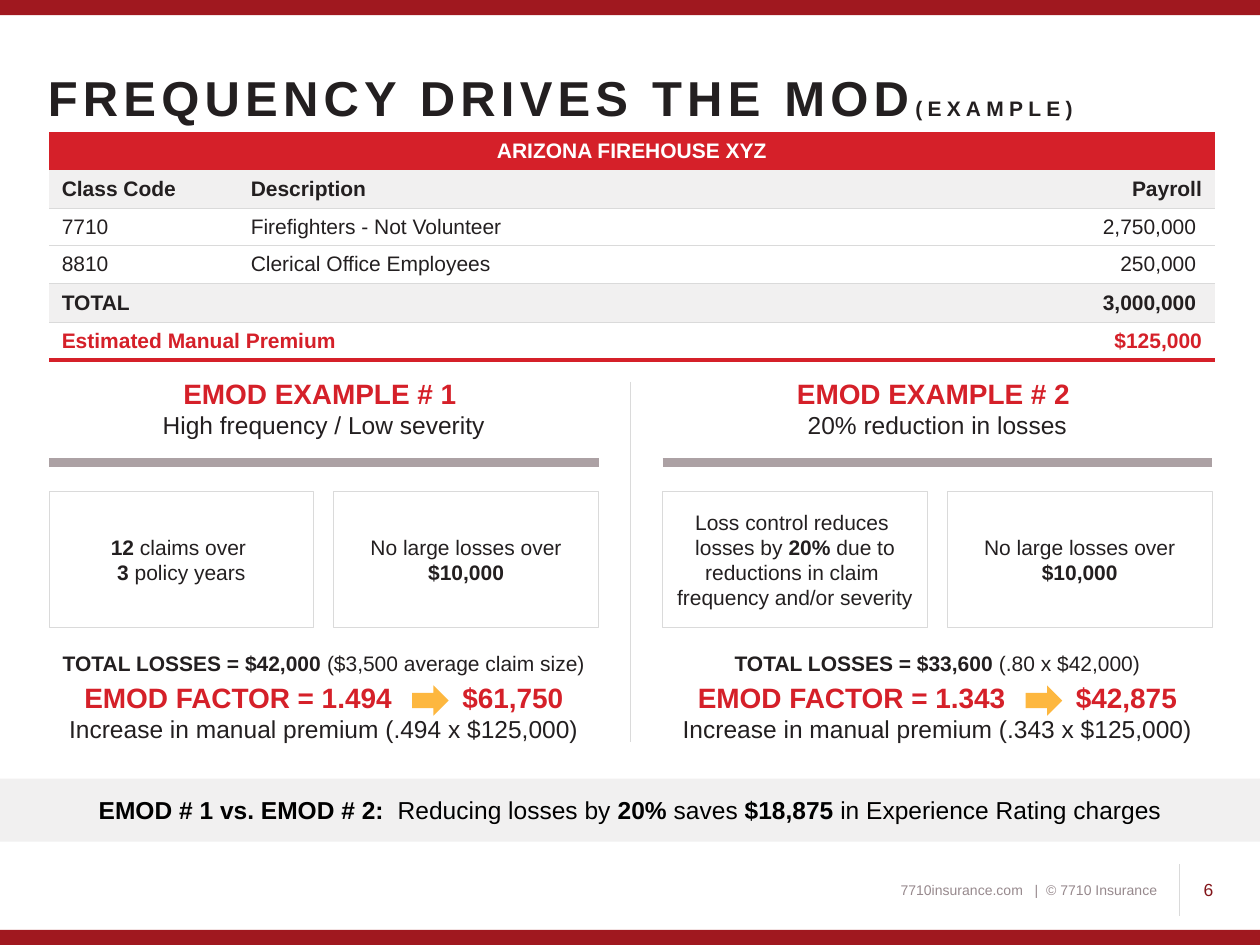
from lxml.etree import SubElement
from pptx import Presentation
from pptx.dml.color import RGBColor
from pptx.enum.shapes import MSO_CONNECTOR, MSO_SHAPE
from pptx.enum.text import MSO_ANCHOR, MSO_AUTO_SIZE, PP_ALIGN
from pptx.oxml.ns import qn
from pptx.util import Inches, Pt

HUES = {
    "ink": "231F20", "red": "D52029", "dark": "A0181F", "wine": "821419",
    "rule": "ACA1A4", "edge": "DADADA", "pale": "F1F0F0", "gold": "FDB73F",
    "note": "97898D", "white": "FFFFFF", "black": "000000",
}
LEFT, MID, RIGHT = PP_ALIGN.LEFT, PP_ALIGN.CENTER, PP_ALIGN.RIGHT


def hue(name):
    return RGBColor.from_string(HUES[name])


def write(frame, paras, align=MID, anchor=MSO_ANCHOR.TOP, after=0):
    """Each paragraph is a list of (text, size, colour, bold) runs."""
    frame.word_wrap = True
    frame.auto_size = MSO_AUTO_SIZE.NONE
    frame.vertical_anchor = anchor
    frame.margin_left = frame.margin_right = 0
    frame.margin_top = frame.margin_bottom = 0
    for i, runs in enumerate(paras):
        para = frame.add_paragraph() if i else frame.paragraphs[0]
        fill_para(para, runs, align)
        para.space_after = Pt(after)


def fill_para(para, runs, align):
    para.alignment = align
    for text, size, color, bold in runs:
        for n, part in enumerate(text.split("\n")):
            if n:
                para.add_line_break()
            run = para.add_run()
            run.text = part
            font = run.font
            font.name, font.size, font.bold = "Arial", Pt(size), bold
            font.color.rgb = hue(color)


def add_text(slide, box, paras, **style):
    shape = slide.shapes.add_textbox(*map(Inches, box))
    write(shape.text_frame, paras, **style)
    return shape


def add_block(slide, box, fill=None, edge=None, kind=MSO_SHAPE.RECTANGLE):
    shape = slide.shapes.add_shape(kind, *map(Inches, box))
    shape.shadow.inherit = False
    if fill:
        shape.fill.solid()
        shape.fill.fore_color.rgb = hue(fill)
    else:
        shape.fill.background()
    if edge:
        shape.line.color.rgb = hue(edge)
        shape.line.width = Pt(0.5)
    else:
        shape.line.fill.background()
    return shape


def add_rule(slide, x1, y1, x2, y2, color, width):
    line = slide.shapes.add_connector(
        MSO_CONNECTOR.STRAIGHT, *map(Inches, (x1, y1, x2, y2)))
    line.line.color.rgb = hue(color)
    line.line.width = Pt(width)
    SubElement(line._element.spPr, qn("a:effectLst"))


def set_edge(cell, side, color=None, width=0.5):
    props = cell._tc.get_or_add_tcPr()
    line = SubElement(props, qn("a:ln" + side), w=str(Pt(width) if color else 0))
    if color:
        solid = SubElement(line, qn("a:solidFill"))
        SubElement(solid, qn("a:srgbClr"), val=HUES[color])
    else:
        SubElement(line, qn("a:noFill"))


def add_frame(slide):
    # Bands and footer
    for top in (0, 7.38):
        add_block(slide, (0, top, 10, 0.12), "dark")
    add_rule(slide, 9.36, 6.86, 9.36, 7.27, "edge", 0.5)
    foot = "7710insurance.com   |  © 7710 Insurance "
    for box, text, size, color in (((6.49, 6.98, 2.73, 0.16), foot, 8, "note"),
                                   ((9.43, 6.98, 0.2, 0.16), "6", 10, "wine")):
        add_text(slide, box, [[(text, size, color, False)]],
                 align=RIGHT, anchor=MSO_ANCHOR.MIDDLE)


def add_title(slide, box):
    title = slide.shapes.title
    title.left, title.top, title.width, title.height = map(Inches, box)
    write(title.text_frame, [[("FREQUENCY DRIVES THE MOD", 28, "ink", True),
                              ("(EXAMPLE)", 12, "ink", True)]],
          align=LEFT, anchor=MSO_ANCHOR.BOTTOM)
    para = title.text_frame.paragraphs[0]
    para.line_spacing = 0.8
    for run in para.runs:
        run._r.get_or_add_rPr().set("spc", "300")


def add_payroll(slide, box):
    # Row: texts, fill, text colour, bold
    rows = [
        (("ARIZONA FIREHOUSE XYZ", "", ""), "red", "white", True),
        (("Class Code", "Description", "Payroll"), "pale", "ink", True),
        (("7710", "Firefighters - Not Volunteer", "2,750,000 "), "white", "ink", False),
        (("8810", "Clerical Office Employees", "250,000 "), "white", "ink", False),
        (("TOTAL", "", "3,000,000 "), "pale", "ink", True),
        (("Estimated Manual Premium", "", "$125,000"), "white", "red", True),
    ]
    last = len(rows) - 1
    table = slide.shapes.add_table(len(rows), 3, *map(Inches, box)).table
    for col, width in zip(table.columns, (1.5, 4.67, 3.08)):
        col.width = Inches(width)
    table.cell(0, 0).merge(table.cell(0, 2))
    table.cell(last, 0).merge(table.cell(last, 1))
    for r, (texts, fill, color, bold) in enumerate(rows):
        table.rows[r].height = Inches(box[3] / len(rows))
        for c, text in enumerate(texts):
            cell = table.cell(r, c)
            cell.margin_left = cell.margin_right = Inches(0.1)
            cell.margin_top = cell.margin_bottom = 0
            cell.vertical_anchor = MSO_ANCHOR.MIDDLE
            set_edge(cell, "L")
            set_edge(cell, "R")
            set_edge(cell, "T", "edge" if r > 1 else None)
            if r == last:
                set_edge(cell, "B", "red", 2.25)
            else:
                set_edge(cell, "B", "edge" if r else None)
            cell.fill.solid()
            cell.fill.fore_color.rgb = hue(fill)
            if text:
                align = MID if r == 0 else RIGHT if c == 2 else LEFT
                fill_para(cell.text_frame.paragraphs[0],
                          [(text, 12, color, bold)], align)


def add_panel(slide, box, head, sub, claims, total, basis, factor, cost, share):
    x, y, w, _ = box
    # Heading and rule
    add_text(slide, (x, y, w, 0.32), [[(head, 16, "red", True)],
                                      [(sub, 14, "ink", False)]])
    add_rule(slide, x, y + 0.68, x + w, y + 0.68, "rule", 5)
    # Two boxes
    limit = [("No large losses over ", False), ("$10,000", True)]
    for i, parts in enumerate((claims, limit)):
        card = add_block(slide, (x + i * 2.26, y + 0.91, 2.1, 1.08), edge="edge")
        write(card.text_frame, [[(text, 12, "ink", bold) for text, bold in parts]],
              anchor=MSO_ANCHOR.MIDDLE, after=12)
    # Losses and factor
    add_text(slide, (x, y + 2.17, w, 0.2),
             [[(f"TOTAL LOSSES = {total} ", 12, "ink", True),
               (basis, 12, "ink", False)]], after=12)
    result = add_text(slide, (x, y + 2.41, w, 0.32), [[
        (f"EMOD FACTOR = {factor} \t{cost} ", 16, "red", True),
        (f"Increase in manual premium ({share} x $125,000)", 14, "ink", False)]])
    props = result.text_frame.paragraphs[0]._p.get_or_add_pPr()
    tabs = SubElement(props, qn("a:tabLst"))
    SubElement(tabs, qn("a:tab"), pos=str(Inches(3)), algn="l")
    add_block(slide, (x + 2.88, y + 2.45, 0.29, 0.24), "gold",
              kind=MSO_SHAPE.RIGHT_ARROW)


def add_banner(slide, box):
    band = add_block(slide, box, "pale")
    parts = ["EMOD # 1 vs. EMOD # 2:  ", "Reducing losses by ", "20% ", "saves ",
             "$18,875 ", "in Experience Rating charges"]
    write(band.text_frame, [[(text, 14, "black", i % 2 == 0)
                             for i, text in enumerate(parts)]],
          anchor=MSO_ANCHOR.MIDDLE)


def main():
    deck = Presentation()
    deck.slide_width, deck.slide_height = Inches(10), Inches(7.5)
    slide = deck.slides.add_slide(deck.slide_layouts[5])
    add_frame(slide)
    add_title(slide, (0.38, 0.26, 9.25, 0.74))
    add_payroll(slide, (0.39, 1.05, 9.25, 1.8))
    add_panel(slide, (0.39, 2.99, 4.36, 2.9), "EMOD EXAMPLE # 1 ",
              "High frequency / Low severity",
              [("12", True), (" claims over \n", False),
               ("3", True), (" policy years", False)],
              "$42,000", "($3,500 average claim size)", "1.494", "$61,750", ".494")
    add_panel(slide, (5.26, 2.99, 4.36, 2.9), "EMOD EXAMPLE # 2 ",
              "20% reduction in losses",
              [("Loss control reduces \nlosses by ", False), ("20% ", True),
               ("due to reductions in claim \nfrequency and/or severity", False)],
              "$33,600", "(.80 x $42,000)", "1.343", "$42,875", ".343")
    add_rule(slide, 5, 3.03, 5, 5.89, "edge", 0.5)
    add_banner(slide, (0, 6.18, 10, 0.5))
    deck.save("out.pptx")


if __name__ == "__main__":
    main()
